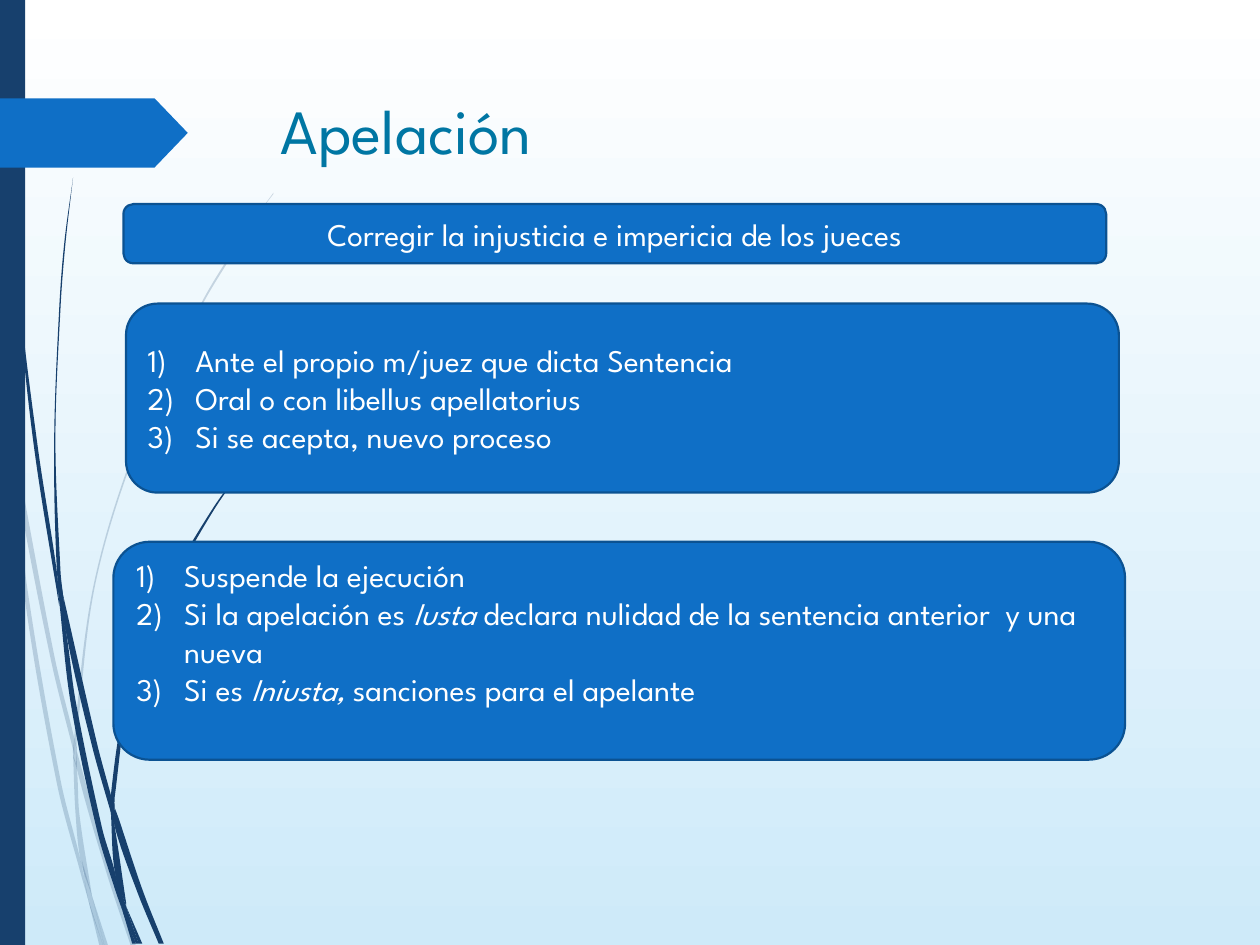
from dataclasses import dataclass
from math import dist

from lxml import etree
from pptx import Presentation
from pptx.dml.color import RGBColor
from pptx.enum import shapes, text
from pptx.oxml.ns import qn
from pptx.util import Inches, Pt

NAVY = RGBColor(0x17, 0x40, 0x6D)
BLUE = RGBColor(0x0F, 0x6F, 0xC6)
EDGE = RGBColor(0x0B, 0x52, 0x92)
TEAL = RGBColor(0x00, 0x76, 0xA3)
WHITE = RGBColor(0xFF, 0xFF, 0xFF)
SKY = RGBColor(0xCE, 0xEA, 0xF9)
FONT = "League Spartan"
HANG = Inches(0.38)
Points = list[tuple[float, float]]


@dataclass
class Blade:
    """A piece of a grass stem: one edge drawn down, the other drawn back up."""
    down: Points
    up: Points


@dataclass
class Box:
    preset: shapes.MSO_SHAPE
    area: tuple[float, float, float, float]
    paragraphs: list[list[tuple[str, bool]]]  # runs: text, italic
    numbered: bool = True
    bottom_margin: float = 0.05


PALE_BLADES = [
    Blade([(0, 2.82), (0, 2.99), (0.07, 3.44), (0.08, 3.5)], [(0.08, 3.5), (0.06, 3.22), (0, 2.82)]),
    Blade([(0.1, 3.45), (0.12, 3.76), (0.4, 5.22), (0.59, 5.99)],
          [(0.59, 5.86), (0.43, 5.2), (0.1, 3.45)]),
    Blade([(0.61, 5.96), (0.61, 6.1), (0.85, 6.94), (1.04, 7.51)],
          [(1.08, 7.51), (0.88, 6.92), (0.64, 6.07), (0.61, 5.96)]),
    Blade([(0.73, 7.11), (0.83, 7.51)], [(0.86, 7.51), (0.73, 7.11)]),
    Blade([(0.08, 3.5), (0.19, 4.7), (0.45, 6.21), (0.64, 6.93), (0.7, 7.14)],
          [(0.7, 7.14), (0.64, 6.83), (0.48, 6.19), (0.22, 4.69), (0.12, 3.76), (0.08, 3.5)]),
    Blade([(0.58, 5.99), (0.6, 6.46), (0.64, 6.83), (0.73, 7.11)],
          [(0.73, 7.11), (0.63, 6.46), (0.61, 6.1), (0.58, 5.99)]),
    Blade([(2.17, 1.53), (2.01, 1.75), (1.86, 1.97), (1.58, 2.44), (1.1, 3.48), (0.75, 4.61),
           (0.59, 5.84), (0.61, 5.96)],
          [(0.61, 5.96), (0.61, 5.84), (0.76, 4.62), (1.11, 3.49), (1.59, 2.45), (1.87, 1.98),
           (2.01, 1.75), (2.17, 1.54)]),
    Blade([(0.7, 7.14), (0.79, 7.51)], [(0.82, 7.51), (0.7, 7.14)]),
    Blade([(0.59, 5.86), (0.58, 5.99), (0.61, 6.1)], [(0.61, 6.1), (0.61, 5.96), (0.59, 5.86)]),
    Blade([(0.65, 6.83), (0.7, 7.14), (0.82, 7.51)], [(0.83, 7.51), (0.73, 7.11), (0.65, 6.83)]),
]

DARK_BLADES = [
    Blade([(0.02, 0), (0.03, 0.48), (0.05, 1.1), (0.14, 2.33), (0.27, 3.55), (0.47, 4.81)],
          [(0.47, 4.81), (0.45, 4.53), (0.3, 3.55), (0.15, 2.32), (0.06, 1.09), (0.04, 0.48),
           (0.03, 0)]),
    Blade([(0.5, 4.72), (0.53, 5.05), (0.73, 5.92), (0.88, 6.45)],
          [(0.88, 6.31), (0.77, 5.9), (0.5, 4.72)]),
    Blade([(0.91, 6.41), (0.91, 6.56), (1.09, 7.08), (1.26, 7.49)],
          [(1.3, 7.49), (1.13, 7.06), (0.94, 6.49), (0.91, 6.41)]),
    Blade([(0.47, 4.77), (0.56, 5.57), (0.77, 6.59), (0.92, 7.08), (0.97, 7.22)],
          [(0.97, 7.22), (0.91, 6.91), (0.81, 6.57), (0.6, 5.56), (0.53, 5.05), (0.47, 4.77)]),
    Blade([(0.58, 1.41), (0.51, 1.93), (0.47, 2.45), (0.43, 3.49), (0.45, 4.49), (0.49, 4.72)],
          [(0.5, 4.72), (0.48, 4.53), (0.44, 3.49), (0.48, 2.45), (0.52, 1.93), (0.58, 1.41)]),
    Blade([(1, 7.19), (1.1, 7.49)], [(1.13, 7.49), (1, 7.19)]),
    Blade([(0.45, 4.49), (0.47, 4.77), (0.53, 5.05)], [(0.53, 5.05), (0.5, 4.72), (0.45, 4.49)]),
    Blade([(2.15, 3.44), (2.03, 3.58), (1.68, 4.05), (1.29, 4.74), (1.01, 5.51), (0.88, 6.31),
           (0.91, 6.41)],
          [(0.91, 6.41), (0.91, 6.33), (1.03, 5.52), (1.31, 4.76), (1.69, 4.06), (2.03, 3.59),
           (2.16, 3.44)]),
    Blade([(0.97, 7.22), (1.05, 7.49)], [(1.08, 7.49), (0.97, 7.22)]),
    Blade([(0.88, 6.45), (0.91, 6.91), (1, 7.19)], [(1, 7.16), (0.91, 6.56), (0.88, 6.45)]),
    Blade([(0.88, 6.31), (0.88, 6.45), (0.91, 6.56)], [(0.91, 6.56), (0.91, 6.41), (0.88, 6.31)]),
    Blade([(0.91, 6.91), (0.97, 7.22), (1.08, 7.49)], [(1.1, 7.49), (1, 7.19), (0.91, 6.91)]),
]

BOXES = [
    Box(shapes.MSO_SHAPE.ROUNDED_RECTANGLE, (0.98, 1.62, 7.8, 0.47),
        [[("Corregir la injusticia e impericia de los jueces", False)]], numbered=False),
    Box(shapes.MSO_SHAPE.FLOWCHART_ALTERNATE_PROCESS, (1, 2.41, 7.88, 1.5),
        [[("Ante el propio m/juez que dicta Sentencia", False)],
         [("Oral o con libellus apellatorius", False)],
         [("Si se acepta, nuevo proceso", False)]]),
    Box(shapes.MSO_SHAPE.ROUNDED_RECTANGLE, (0.9, 4.3, 8.03, 1.73),
        [[("Suspende la ejecución", False)],
         [("Si la apelación es ", False), ("Iusta ", True),
          ("declara nulidad de la sentencia anterior  y una nueva", False)],
         [("Si es ", False), ("Iniusta, ", True), ("sanciones para el apelante", False)]],
        bottom_margin=0.35),
]


def handles(edge: Points) -> list[Points]:
    """Two Bézier handles for each step along an edge."""
    ends = zip([edge[0], *edge], edge[1:] + [edge[-1]])
    tangents = [((bx - ax) / dist((ax, ay), (bx, by)), (by - ay) / dist((ax, ay), (bx, by)))
                for (ax, ay), (bx, by) in ends]
    result = []
    for p, q, t, v in zip(edge, edge[1:], tangents, tangents[1:]):
        h = dist(p, q) / 3
        result.append([(p[0] + t[0] * h, p[1] + t[1] * h), (q[0] - v[0] * h, q[1] - v[1] * h)])
    return result


def paint(sp, color: RGBColor) -> None:
    sp.shadow.inherit = False
    sp.fill.solid()
    sp.fill.fore_color.rgb = color
    sp.line.fill.background()


def add_blade(slide, blade: Blade, alpha: int) -> None:
    down, up = ([(Inches(x), Inches(y)) for x, y in edge] for edge in (blade.down, blade.up))
    fb = slide.shapes.build_freeform(*down[0])
    fb.add_line_segments(down[1:] + up, close=True)
    sp = fb.convert_to_shape()
    paint(sp, NAVY)
    # Bend every step but the straight one that joins the two edges
    bends = handles(down) + [None] + handles(up)
    for step, bend in zip(list(sp._element.iter(qn("a:lnTo"))), bends):
        if bend:
            step.tag = qn("a:cubicBezTo")
            for i, (x, y) in enumerate(bend):
                pt = etree.Element(qn("a:pt"), x=str(round(x - sp.left)), y=str(round(y - sp.top)))
                step.insert(i, pt)
    if alpha < 100:
        clr = sp.fill._xPr.find(qn("a:solidFill"))[0]
        etree.SubElement(clr, qn("a:alpha")).set("val", str(alpha * 1000))


def add_plain(slide, preset: shapes.MSO_SHAPE, area: tuple, color: RGBColor):
    sp = slide.shapes.add_shape(preset, *map(Inches, area))
    paint(sp, color)
    return sp


def add_run(p, words: str, size: int, color: RGBColor, italic: bool = False) -> None:
    r = p.add_run()
    r.text = words
    r.font.name, r.font.size, r.font.italic = FONT, Pt(size), italic
    r.font.color.rgb = color


def add_box(slide, box: Box) -> None:
    sp = add_plain(slide, box.preset, box.area, BLUE)
    sp.line.color.rgb, sp.line.width = EDGE, Pt(1.25)
    tf = sp.text_frame
    tf.word_wrap = True
    tf.vertical_anchor = text.MSO_ANCHOR.MIDDLE
    tf.margin_bottom = Inches(box.bottom_margin)
    for i, runs in enumerate(box.paragraphs):
        p = tf.add_paragraph() if i else tf.paragraphs[0]
        p.alignment = text.PP_ALIGN.LEFT if box.numbered else text.PP_ALIGN.CENTER
        if box.numbered:
            pPr = p._p.get_or_add_pPr()
            pPr.set("marL", str(HANG))
            pPr.set("indent", str(-HANG))
            etree.SubElement(pPr, qn("a:buAutoNum")).set("type", "arabicParenR")
        for words, italic in runs:
            add_run(p, words, 18, WHITE, italic)


def main() -> None:
    prs = Presentation()
    prs.slide_width, prs.slide_height = Inches(10), Inches(7.5)
    slide = prs.slides.add_slide(prs.slide_layouts[5])
    # Background
    bg = slide.background.fill
    bg.gradient()
    bg.gradient_angle = 270
    for stop, color, position in zip(bg.gradient_stops, (WHITE, SKY), (0, 1)):
        stop.color.rgb, stop.position = color, position
    # Decoration on the left
    for blades, alpha in ((PALE_BLADES, 20), (DARK_BLADES, 100)):
        for blade in blades:
            add_blade(slide, blade, alpha)
    add_plain(slide, shapes.MSO_SHAPE.RECTANGLE, (0, 0, 0.2, 7.5), NAVY)
    tag = add_plain(slide, shapes.MSO_SHAPE.PENTAGON, (0, 0.78, 1.49, 0.55), BLUE)
    tag.adjustments[0] = 0.48
    # Title
    title = slide.shapes.title
    title.left, title.top, title.width, title.height = map(Inches, (2.13, 0.68, 7.21, 1.4))
    title.text_frame.vertical_anchor = text.MSO_ANCHOR.TOP
    p = title.text_frame.paragraphs[0]
    p.alignment = text.PP_ALIGN.LEFT
    add_run(p, "Apelación", 36, TEAL)
    # Text boxes
    for box in BOXES:
        add_box(slide, box)
    prs.save("out.pptx")


if __name__ == "__main__":
    main()
